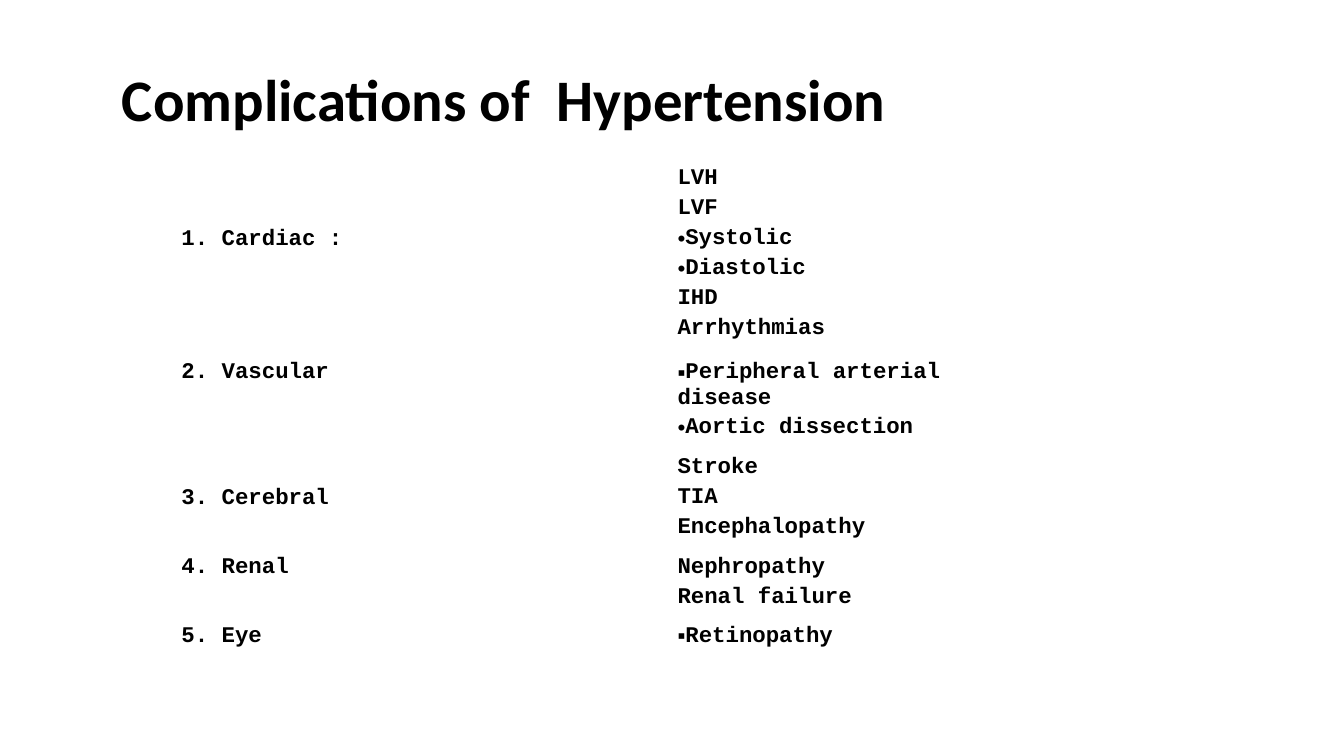
from dataclasses import dataclass
from typing import Any

from lxml import etree
from pptx import Presentation
from pptx import util as u
from pptx.dml import color
from pptx.enum import text
from pptx.oxml import ns


@dataclass(frozen=True)
class Theme:
    ink: color.RGBColor = color.RGBColor(0, 0, 0)
    edge: str = "FFFFFF"
    head: str = "Calibri"
    body: str = "Courier New"
    mark: str = "Arial"
    large: u.Pt = u.Pt(42)
    small: u.Pt = u.Pt(16)
    gap: u.Pt = u.Pt(3.2)
    line: u.Pt = u.Pt(1)


@dataclass(frozen=True)
class Item:
    words: str
    mark: str = ""


@dataclass(frozen=True)
class Group:
    name: str
    items: tuple[Item, ...]
    height: float
    drop: int = 0


THEME = Theme()
PAD = 0.05
STEP = 0.3
WIDTHS = (4.92, 3)
GROUPS = (
    Group("1. Cardiac :", (Item("LVH"), Item("LVF"), Item("Systolic", "•"),
                           Item("Diastolic", "•"), Item("IHD"),
                           Item("Arrhythmias")), 1.73, 2),
    Group("2. Vascular", (Item("Peripheral arterial disease", "▪"),
                          Item("Aortic dissection", "•")), 0.67),
    Group("3. Cerebral", (Item("Stroke"), Item("TIA"),
                          Item("Encephalopathy")), 0.99, 1),
    Group("4. Renal", (Item("Nephropathy"), Item("Renal failure")), 0.63),
    Group("5. Eye", (Item("Retinopathy", "▪"),), 0.49),
)
TITLE_FONT = {"name": THEME.head, "size": THEME.large, "bold": True}
BODY_FONT = {"name": THEME.body, "size": THEME.small, "bold": True}


def apply(thing: Any, form: dict[str, Any]) -> None:
    for key, value in form.items():
        setattr(thing, key, value)


def style(font: Any, form: dict[str, Any]) -> None:
    apply(font, form)
    font.color.rgb = THEME.ink


def add_node(owner: Any, tag: str, **attrs: str) -> Any:
    return etree.SubElement(owner, ns.qn(tag), attrs)


def add_mark(para: Any, mark: str) -> None:
    props = para._p.get_or_add_pPr()
    apply_zero = {"marL": "0", "indent": "0"}
    for key, value in apply_zero.items():
        props.set(key, value)
    add_node(props, "a:buFont", typeface=THEME.mark)
    add_node(props, "a:buChar", char=mark)


def add_edges(cell: Any) -> None:
    props = cell._tc.get_or_add_tcPr()
    for side in ("a:lnL", "a:lnR", "a:lnT", "a:lnB"):
        line = add_node(props, side, w=str(int(THEME.line)))
        fill = add_node(line, "a:solidFill")
        add_node(fill, "a:srgbClr", val=THEME.edge)


def fill_cell(cell: Any, items: tuple[Item, ...], drop: int = 0) -> None:
    add_edges(cell)
    cell.fill.background()
    apply(cell, {
        "margin_left": u.Inches(0.1), "margin_right": u.Inches(0.1),
        "margin_top": u.Inches(PAD + drop * STEP),
        "margin_bottom": u.Inches(PAD),
        "vertical_anchor": text.MSO_ANCHOR.TOP,
    })
    frame = cell.text_frame
    for spot, item in enumerate(items):
        para = frame.add_paragraph() if spot else frame.paragraphs[0]
        para.space_before = THEME.gap
        if item.mark:
            add_mark(para, item.mark)
        run = para.add_run()
        run.text = item.words
        style(run.font, BODY_FONT)


def add_title(slide: Any) -> None:
    title = slide.shapes.title
    apply(title, {"left": u.Inches(1.11), "top": u.Inches(0.57),
                  "width": u.Inches(10.29), "height": u.Inches(0.81)})
    frame = title.text_frame
    apply(frame, {"text": "Complications of  Hypertension", "word_wrap": True,
                  "auto_size": text.MSO_AUTO_SIZE.SHAPE_TO_FIT_TEXT,
                  "vertical_anchor": text.MSO_ANCHOR.TOP})
    para = frame.paragraphs[0]
    para.alignment = text.PP_ALIGN.LEFT
    style(para.runs[0].font, TITLE_FONT)


def add_grid(slide: Any) -> None:
    grid = slide.shapes.add_table(
        len(GROUPS), len(WIDTHS), u.Inches(1.7), u.Inches(1.6),
        u.Inches(sum(WIDTHS)), u.Inches(sum(g.height for g in GROUPS))).table
    apply(grid, {"first_row": False, "horz_banding": False})
    for col, width in zip(grid.columns, WIDTHS):
        col.width = u.Inches(width)
    for row, group in zip(grid.rows, GROUPS):
        row.height = u.Inches(group.height)
        fill_cell(row.cells[0], (Item(group.name),), group.drop)
        fill_cell(row.cells[1], group.items)


def main() -> None:
    deck = Presentation()
    apply(deck, {"slide_width": u.Inches(13.33),
                 "slide_height": u.Inches(7.5)})
    slide = deck.slides.add_slide(deck.slide_layouts[5])
    add_title(slide)
    add_grid(slide)
    deck.save("out.pptx")


if __name__ == "__main__":
    main()
